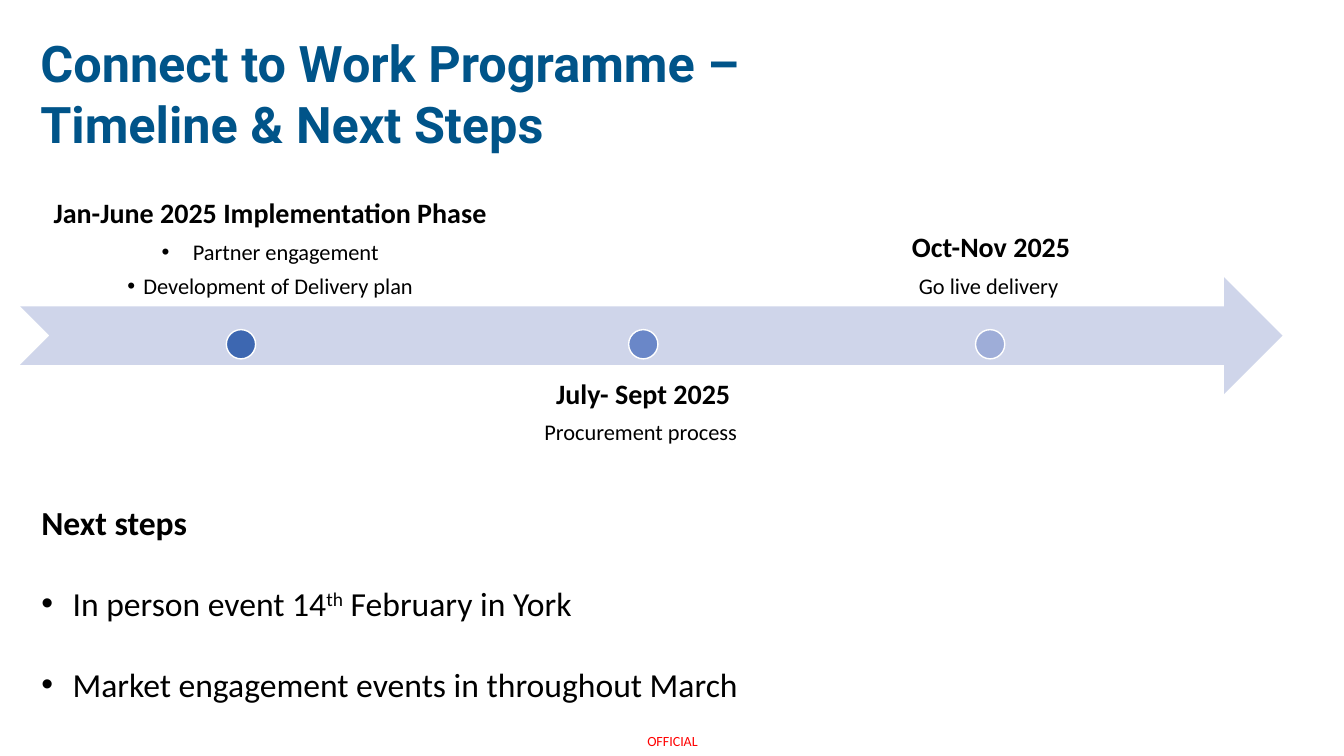
import pptx
import pptx.util
import pptx.dml.color
import pptx.enum.shapes
import pptx.enum.text
from dataclasses import dataclass
from lxml import etree
from pptx.util import Inches, Pt

ALIGN = pptx.enum.text.PP_ALIGN
ANCHOR = pptx.enum.text.MSO_ANCHOR
SHAPE = pptx.enum.shapes.MSO_SHAPE

TITLE = ["Connect to Work Programme –", "Timeline & Next Steps"]
# heading, details as (text, bullet indent), box left, box width, above arrow, dot centre, dot colour
PHASES = [
    ("Jan-June 2025 Implementation Phase",
     [("Partner engagement", 0.31), ("Development of Delivery plan", 0.16)],
     0.21, 4.94, True, 2.39, "3D67B1"),
    ("July- Sept 2025", [("Procurement process ", 0)], 4.74, 3.28, False, 6.38, "6A87C8"),
    ("Oct-Nov 2025", [("Go live delivery ", 0)], 8.19, 3.28, True, 9.82, "9EADD8"),
]
STEPS_HEADING = "Next steps"
# each step is a list of (text, raised)
STEPS = [
    [("In person event 14", False), ("th", True), (" February in York", False)],
    [("Market engagement events in throughout March", False)],
]
MARKING = "OFFICIAL"


@dataclass(frozen=True)
class Theme:
    title_font: str = "Roboto"
    body_font: str = "Calibri"
    title: str = "005489"
    text: str = "000000"
    marking: str = "FF0000"
    arrow: str = "CFD5EA"
    dot_line: str = "FFFFFF"
    title_size: int = 36
    steps_size: int = 24
    phase_size: int = 20
    detail_size: int = 16
    marking_size: int = 10


THEME = Theme()
ARROW_TOP, ARROW_HEIGHT = 2.75, 1.16
PHASE_TOP_ABOVE, PHASE_TOP_BELOW, PHASE_HEIGHT = 1.97, 3.61, 1.16
DOT_TOP, DOT_SIZE = 3.27, 0.29


def rgb(value):
    return pptx.dml.color.RGBColor.from_string(value)


def place(shape, left, top, width, height):
    shape.left, shape.top = Inches(left), Inches(top)
    shape.width, shape.height = Inches(width), Inches(height)


def set_frame(frame, anchor, inset=None):
    frame.word_wrap = True
    frame.auto_size = pptx.enum.text.MSO_AUTO_SIZE.NONE
    frame.vertical_anchor = anchor
    if inset is not None:
        frame.margin_left = frame.margin_right = Inches(inset)
        frame.margin_top = frame.margin_bottom = Inches(inset)


def add_para(frame, spans, size, color=THEME.text, font=THEME.body_font, bold=False,
             align=ALIGN.LEFT, indent=0, before=0, after=0, spacing=1.0):
    """Write (text, raised) spans as the next paragraph; an indent gives it a bullet."""
    para = frame.paragraphs[0]
    if para.runs:
        para = frame.add_paragraph()
    para.alignment, para.line_spacing = align, spacing
    para.space_before, para.space_after = Pt(before), Pt(after)
    props = para._p.get_or_add_pPr()
    props.set("marL", str(Inches(indent)))
    props.set("indent", str(-Inches(indent)))
    if indent:
        bullet_font = etree.SubElement(props, pptx.oxml.ns.qn("a:buFont"))
        bullet_font.set("typeface", "Arial")
        etree.SubElement(props, pptx.oxml.ns.qn("a:buChar")).set("char", "•")
    else:
        etree.SubElement(props, pptx.oxml.ns.qn("a:buNone"))
    para.font.name, para.font.size, para.font.bold = font, Pt(size), bold
    para.font.color.rgb = rgb(color)
    for text, raised in spans:
        span = para.add_run()
        span.text = text
        if raised:
            span._r.get_or_add_rPr().set("baseline", "30000")


def add_filled(page, kind, left, top, width, height, color):
    shape = page.shapes.add_shape(kind, Inches(left), Inches(top), Inches(width), Inches(height))
    shape.shadow.inherit = False
    shape.fill.solid()
    shape.fill.fore_color.rgb = rgb(color)
    shape.line.fill.background()
    return shape


def add_text_box(page, left, top, width, height, anchor, inset):
    box = page.shapes.add_textbox(Inches(left), Inches(top), Inches(width), Inches(height))
    set_frame(box.text_frame, anchor, inset)
    return box.text_frame


def add_title(page):
    place(page.shapes.title, 0.3, 0.27, 10.94, 1.31)
    frame = page.shapes.title.text_frame
    set_frame(frame, ANCHOR.TOP)
    for line in TITLE:
        add_para(frame, [(line, False)], THEME.title_size, THEME.title, THEME.title_font, bold=True)


def add_timeline(page):
    add_filled(page, SHAPE.NOTCHED_RIGHT_ARROW, 0.2, ARROW_TOP, 12.52, ARROW_HEIGHT, THEME.arrow)
    for heading, details, left, width, above, centre, color in PHASES:
        top = PHASE_TOP_ABOVE if above else PHASE_TOP_BELOW
        anchor = ANCHOR.BOTTOM if above else ANCHOR.TOP
        frame = add_text_box(page, left, top, width, PHASE_HEIGHT, anchor, 0.16)
        layout = dict(align=ALIGN.CENTER, spacing=0.9)
        add_para(frame, [(heading, False)], THEME.phase_size, bold=True, after=8, **layout)
        for text, indent in details:
            add_para(frame, [(text, False)], THEME.detail_size, indent=indent, after=7, **layout)
        dot = add_filled(page, SHAPE.OVAL, centre - DOT_SIZE / 2, DOT_TOP, DOT_SIZE, DOT_SIZE, color)
        dot.line.color.rgb = rgb(THEME.dot_line)
        dot.line.width = Pt(1)


def add_steps(page):
    body = page.placeholders[1]
    place(body, 0.31, 4.93, 11.72, 2.12)
    set_frame(body.text_frame, ANCHOR.TOP)
    add_para(body.text_frame, [(STEPS_HEADING, False)], THEME.steps_size, bold=True)
    for spans in STEPS:
        add_para(body.text_frame, spans, THEME.steps_size, indent=0.31, before=29)


def add_marking(page):
    frame = add_text_box(page, 6.27, 7.21, 0.8, 0.29, ANCHOR.MIDDLE, 0)
    add_para(frame, [(MARKING, False)], THEME.marking_size, THEME.marking, align=ALIGN.CENTER)


def main():
    deck = pptx.Presentation()
    deck.slide_width, deck.slide_height = Inches(13.33), Inches(7.5)
    page = deck.slides.add_slide(deck.slide_layouts[1])
    add_marking(page)
    add_title(page)
    add_timeline(page)
    add_steps(page)
    deck.save("out.pptx")


if __name__ == "__main__":
    main()
